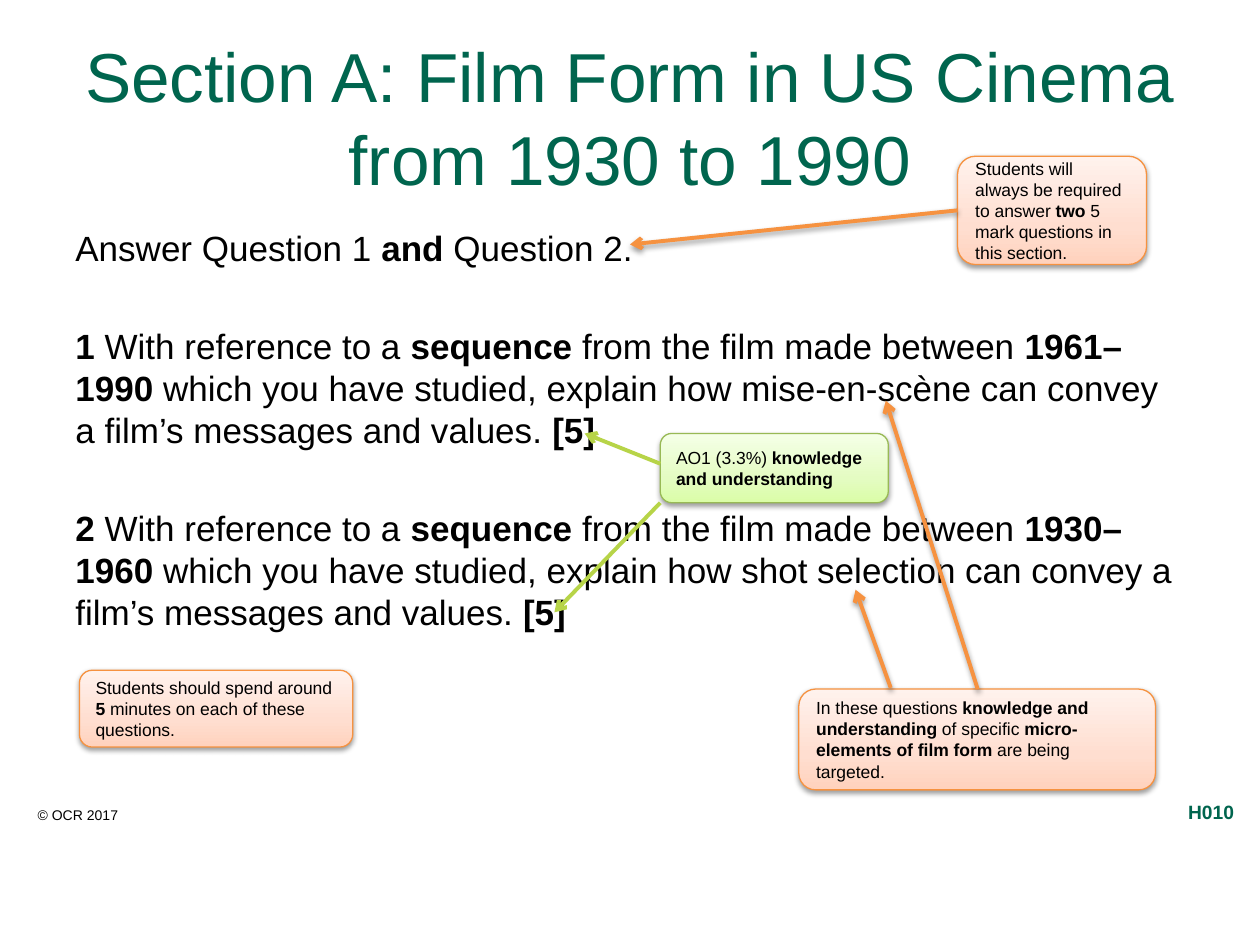
from copy import deepcopy

from lxml.etree import SubElement
from pptx import Presentation
from pptx.dml.color import RGBColor
from pptx.enum.shapes import MSO_CONNECTOR, MSO_SHAPE
from pptx.enum.text import MSO_ANCHOR, PP_ALIGN
from pptx.oxml.ns import qn
from pptx.util import Pt

COLORS = {"green": "00654E", "black": "000000", "orange": "F69240",
          "lime": "B7D448", "lime_edge": "98B955"}
ORANGE_FILL = ["FFD2BD", "FFDED0", "FFF2ED"]
LIME_FILL = ["DAFDA7", "E4FCC2", "F5FFE7"]


def write_runs(p, text, size, color="black"):
    for i, part in enumerate(text.split("*")):
        if part:
            r = p.add_run()
            r.text = part
            r.font.name = "Arial"
            r.font.size = Pt(size)
            r.font.bold = i % 2 == 1
            r.font.color.rgb = RGBColor.from_string(COLORS[color])


def set_effects(spPr, shadow):
    effects = SubElement(spPr, qn("a:effectLst"))
    if shadow:
        outer = SubElement(effects, qn("a:outerShdw"), blurRad=str(Pt(3.1)),
                           dist=str(Pt(1.6)), dir="5400000", rotWithShape="0")
        clr = SubElement(outer, qn("a:srgbClr"), val=COLORS["black"])
        SubElement(clr, qn("a:alpha"), val="38000")


prs = Presentation()
prs.slide_width, prs.slide_height = Pt(720), Pt(540)
s = prs.slides.add_slide(prs.slide_layouts[6])

labels = [
    (14.4, 457.2, 136, 17.3, "© OCR 2017", 8, "black"),
    (671.8, 453.6, 56.9, 20.9, "*H010*", 11, "green"),
]
for x, y, w, h, text, size, color in labels:
    tf = s.shapes.add_textbox(Pt(x), Pt(y), Pt(w), Pt(h)).text_frame
    tf.word_wrap = True
    write_runs(tf.paragraphs[0], text, size, color)

tf = s.shapes.add_textbox(Pt(36), Pt(21.6), Pt(648), Pt(90)).text_frame
tf.word_wrap = True
tf.vertical_anchor = MSO_ANCHOR.MIDDLE
p = tf.paragraphs[0]
p.alignment = PP_ALIGN.CENTER
write_runs(p, "Section A: Film Form in US Cinema from 1930 to 1990", 39.6, "green")

tf = s.shapes.add_textbox(Pt(36), Pt(126), Pt(648), Pt(337)).text_frame
tf.word_wrap = True
write_runs(tf.paragraphs[0], "Answer Question 1 *and* Question 2.", 20)
questions = [(1, "1961–1990", "mise-en-scène"), (2, "1930–1960", "shot selection")]
for number, years, element in questions:
    p = tf.add_paragraph()
    p.space_before = Pt(32)
    write_runs(p, f"*{number} *With reference to a *sequence* from the film made between "
                  f"*{years}* which you have studied, explain how {element} can convey "
                  "a film’s messages and values. *[5]*", 20)

callouts = [
    (377.3, 247.7, 130.3, 39.6, LIME_FILL, "lime_edge",
     "AO1 (3.3%) *knowledge and understanding*"),
    (547.2, 89.3, 108, 61.9, ORANGE_FILL, "orange",
     "Students will always be required to answer *two* 5 mark questions in this section."),
    (45.4, 383, 156.2, 43.9, ORANGE_FILL, "orange",
     "Students should spend around *5 *minutes on each of these questions."),
    (456.5, 393.8, 203.8, 57.6, ORANGE_FILL, "orange",
     "In these questions *knowledge and understanding* of specific "
     "*micro-elements of film form* are being targeted."),
]
for x, y, w, h, shades, edge, text in callouts:
    sp = s.shapes.add_shape(MSO_SHAPE.ROUNDED_RECTANGLE, Pt(x), Pt(y), Pt(w), Pt(h))
    sp.fill.gradient()
    sp.fill.gradient_angle = 90
    stop_list = sp._element.spPr.find(".//" + qn("a:gsLst"))
    stop_list.insert(1, deepcopy(stop_list[0]))
    for stop, shade, position in zip(sp.fill.gradient_stops, shades, (0, 0.35, 1)):
        stop.color.rgb = RGBColor.from_string(shade)
        stop.position = position
    sp.line.color.rgb = RGBColor.from_string(COLORS[edge])
    sp.line.width = Pt(0.75)
    set_effects(sp._element.spPr, True)
    tf = sp.text_frame
    tf.word_wrap = True
    tf.vertical_anchor = MSO_ANCHOR.MIDDLE
    tf.paragraphs[0].alignment = PP_ALIGN.LEFT
    write_runs(tf.paragraphs[0], text, 10)

arrows = [
    (377.3, 265, 334.1, 247.7, "lime"),
    (377.3, 287.3, 316.8, 349.9, "lime"),
    (547.2, 120.2, 360, 139.7, "orange"),
    (509, 393.1, 488.9, 337, "orange"),
    (558.7, 393.8, 506.2, 229, "orange"),
]
for x1, y1, x2, y2, color in arrows:
    line = s.shapes.add_connector(MSO_CONNECTOR.STRAIGHT, Pt(x1), Pt(y1), Pt(x2), Pt(y2))
    line.line.color.rgb = RGBColor.from_string(COLORS[color])
    line.line.width = Pt(2.25)
    SubElement(line.line._get_or_add_ln(), qn("a:tailEnd"), type="arrow")
    set_effects(line._element.spPr, color == "orange")

prs.save("out.pptx")
